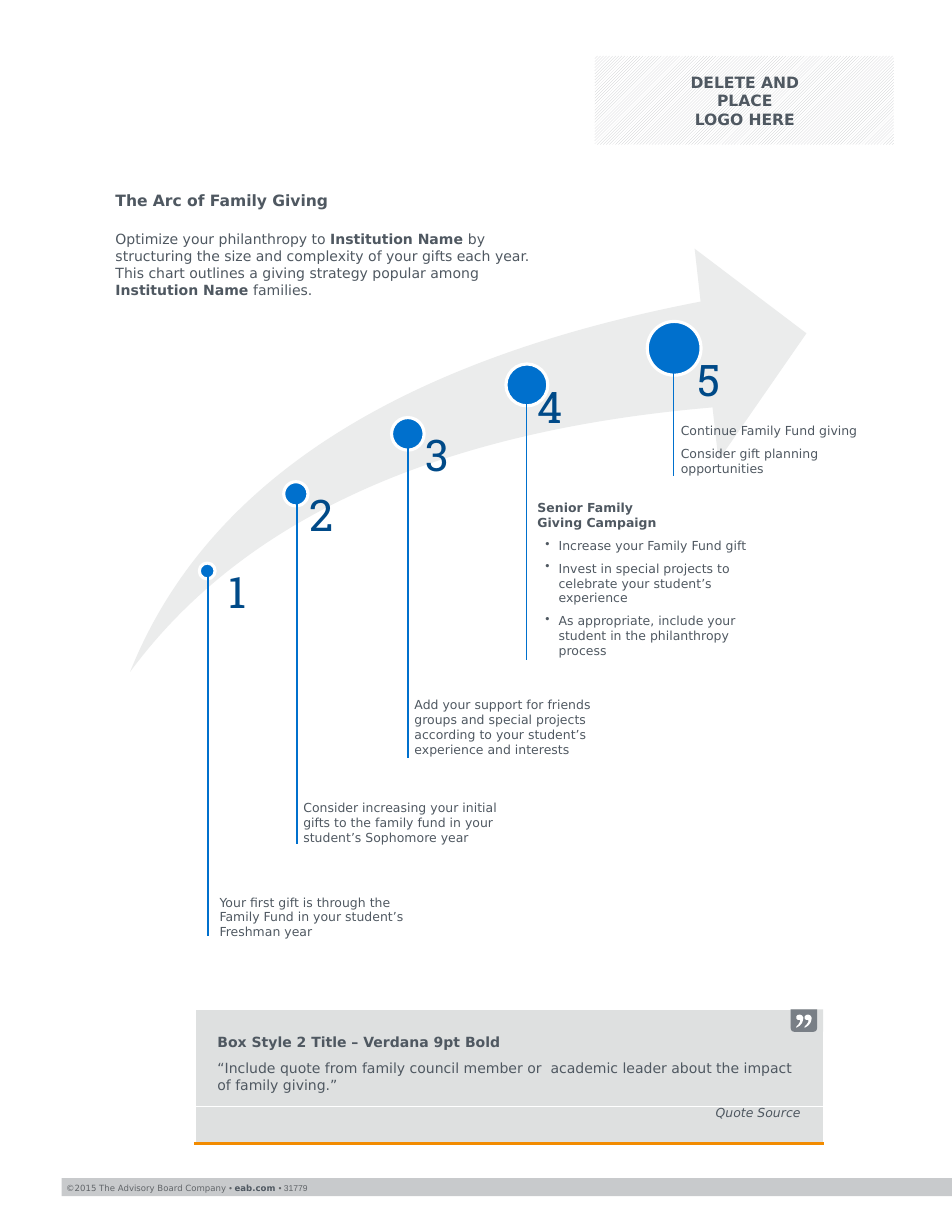
"""Build the Arc of Family Giving page."""
from dataclasses import dataclass
from typing import NamedTuple

from lxml.etree import SubElement
from pptx import Presentation
from pptx.dml.color import RGBColor
from pptx.enum.dml import MSO_PATTERN
from pptx.enum.shapes import MSO_CONNECTOR, MSO_SHAPE
from pptx.enum.text import MSO_ANCHOR, PP_ALIGN
from pptx.oxml.ns import qn
from pptx.util import Cm, Pt

WHITE = RGBColor(0xFF, 0xFF, 0xFF)
INK = RGBColor(0x4F, 0x58, 0x61)
FOOTER_INK = RGBColor(0x61, 0x65, 0x69)
FOOTER_GRAY = RGBColor(0xC8, 0xCA, 0xCC)
ARROW_GRAY = RGBColor(0xEB, 0xEC, 0xEC)
PANEL_GRAY = RGBColor(0xDE, 0xE0, 0xE0)
TAB_GRAY = RGBColor(0x79, 0x7F, 0x86)
BLUE = RGBColor(0x00, 0x70, 0xCD)
NAVY = RGBColor(0x00, 0x4A, 0x88)
ORANGE = RGBColor(0xF2, 0x8B, 0x00)
BODY_FONT = "DejaVu Sans"
NUMBER_FONT = "Roboto Slab"
NUMBER_BOTTOM = 15.22
QUOTE_MARK = [(0, 30), (0, 27), (5, 22), (8, 17), (9, 14), (7, 12), (3, 12), (0, 9), (0, 4),
              (3, 1), (8, 0), (13, 2), (16, 7), (15, 13), (13, 19), (8, 25)]


class Box(NamedTuple):
    left: float
    top: float
    width: float
    height: float

    def lengths(self) -> list:
        return [Cm(value) for value in self]


@dataclass
class Run:
    text: str
    bold: bool = False
    italic: bool = False
    font: str = BODY_FONT
    color: RGBColor = INK
    size: float | None = None


@dataclass
class Line:
    runs: list[Run]
    bullet: bool = False
    align: PP_ALIGN | None = None
    before: float = 5
    after: float = 0
    spacing: float | None = None


@dataclass
class Step:
    center: tuple[float, float]
    diameter: float
    number_box: Box
    inset: float
    align: PP_ALIGN
    stem: tuple[float, float, float]
    note_box: Box
    notes: list[Line]


def plain(*texts: str, bullet: bool = False) -> list[Line]:
    return [Line([Run(text)], bullet) for text in texts]


def number_box(left: float, top: float, width: float) -> Box:
    return Box(left, top, width, round(NUMBER_BOTTOM - top, 2))


STEPS = [
    Step((4.7, 12.95), 0.36, number_box(3.43, 12.95, 2.16), 0.18, PP_ALIGN.RIGHT,
         (4.72, 12.98, 21.23), Box(4.98, 20.29, 4.57, 1.02),
         plain("Your first gift is through the Family Fund in your student’s Freshman year")),
    Step((6.71, 11.2), 0.55, number_box(6.73, 11.2, 2.54), 0.3, PP_ALIGN.LEFT,
         (6.73, 11.3, 19.15), Box(6.88, 18.14, 4.57, 1.02),
         plain("Consider increasing your initial gifts to the family fund in your "
               "student’s Sophomore year")),
    Step((9.25, 9.84), 0.74, number_box(9.27, 9.83, 2.97), 0.38, PP_ALIGN.LEFT,
         (9.25, 10.06, 17.2), Box(9.4, 15.82, 4.57, 1.37),
         plain("Add your support for friends groups and special projects according to "
               "your student’s experience and interests")),
    Step((11.95, 8.73), 0.95, number_box(10.31, 8.76, 2.46), 0.51, PP_ALIGN.RIGHT,
         (11.94, 9.07, 14.96), Box(12.19, 11.35, 5.21, 3.61),
         [Line([Run("Senior Family\nGiving Campaign", bold=True)])]
         + plain("Increase your Family Fund gift",
                 "Invest in special projects to celebrate your student’s experience",
                 "As appropriate, include your student in the philanthropy process",
                 bullet=True)),
    Step((15.29, 7.9), 1.22, number_box(15.19, 8.15, 2.39), 0.64, PP_ALIGN.LEFT,
         (15.27, 8.2, 10.8), Box(15.44, 9.6, 4.57, 1.19),
         plain("Continue Family Fund giving", "Consider gift planning opportunities")),
]


def write(frame, lines: list[Line], size: float) -> None:
    for index, line in enumerate(lines):
        paragraph = frame.add_paragraph() if index else frame.paragraphs[0]
        paragraph.alignment = line.align
        paragraph.space_before = Pt(line.before if index else 0)
        paragraph.space_after = Pt(line.after)
        paragraph.line_spacing = line.spacing
        if line.bullet:
            properties = paragraph._p.get_or_add_pPr()
            properties.set("marL", str(Cm(0.48)))
            properties.set("indent", str(Cm(-0.3)))
            SubElement(properties, qn("a:buChar")).set("char", "•")
        for item in line.runs:
            for part, text in enumerate(item.text.split("\n")):
                if part:
                    paragraph.add_line_break()
                run = paragraph.add_run()
                run.text = text
                run.font.name = item.font
                run.font.size = Pt(item.size or size)
                run.font.bold = item.bold
                run.font.italic = item.italic
                run.font.color.rgb = item.color


def add_text(slide, box: Box, lines: list[Line], size: float, inset: float = 0,
             anchor: MSO_ANCHOR = MSO_ANCHOR.TOP) -> None:
    frame = slide.shapes.add_textbox(*box.lengths()).text_frame
    frame.word_wrap = True
    frame.vertical_anchor = anchor
    frame.margin_left = Cm(inset)
    frame.margin_top = frame.margin_right = frame.margin_bottom = 0
    write(frame, lines, size)


def paint(shape, color: RGBColor):
    shape.shadow.inherit = False
    shape.fill.solid()
    shape.fill.fore_color.rgb = color
    shape.line.fill.background()
    return shape


def add_preset(slide, kind: MSO_SHAPE, box: Box, color: RGBColor):
    return paint(slide.shapes.add_shape(kind, *box.lengths()), color)


def add_marker(slide, number: int, step: Step) -> None:
    (x, y), diameter = step.center, step.diameter
    circle = add_preset(slide, MSO_SHAPE.OVAL,
                        Box(x - diameter / 2, y - diameter / 2, diameter, diameter), BLUE)
    circle.line.color.rgb = WHITE
    circle.line.width = Pt(2)
    label = Run(str(number), font=NUMBER_FONT, color=NAVY)
    add_text(slide, step.number_box, [Line([label], align=step.align, spacing=0.9)], 28, step.inset)


def add_stem(slide, x: float, top: float, bottom: float) -> None:
    stem = slide.shapes.add_connector(MSO_CONNECTOR.STRAIGHT, Cm(x), Cm(top), Cm(x), Cm(bottom))
    stem.line.color.rgb = BLUE
    stem.line.width = Pt(1)
    SubElement(stem._element.spPr, qn("a:effectLst"))


def add_quote_panel(slide) -> None:
    table = slide.shapes.add_table(2, 1, *Box(4.42, 22.89, 14.25, 3.05).lengths()).table
    table.first_row = table.horz_banding = False
    title = Line([Run("Box Style 2 Title – Verdana 9pt Bold", bold=True)])
    quote = Line([Run("“Include quote from family council member or  academic leader about "
                      "the impact of family giving.”")], before=6, after=6)
    source = Line([Run("Quote Source", italic=True)], align=PP_ALIGN.RIGHT)
    rows = [(2.2, 0.58, 0.25, [title, quote], 9), (0.85, 0, 0.51, [source], 8)]
    for index, (height, top, bottom, lines, size) in enumerate(rows):
        table.rows[index].height = Cm(height)
        cell = table.cell(index, 0)
        cell.margin_left = cell.margin_right = Cm(0.51)
        cell.margin_top, cell.margin_bottom = Cm(top), Cm(bottom)
        write(cell.text_frame, lines, size)
        if index == len(rows) - 1:
            border = SubElement(cell._tc.get_or_add_tcPr(), qn("a:lnB"), w=str(Pt(2.25)))
            fill = SubElement(border, qn("a:solidFill"))
            SubElement(fill, qn("a:srgbClr"), val=str(ORANGE))
        cell.fill.solid()
        cell.fill.fore_color.rgb = PANEL_GRAY
    add_preset(slide, MSO_SHAPE.RECTANGLE, Box(17.93, 22.89, 0.74, 0.51), PANEL_GRAY)
    tab = add_preset(slide, MSO_SHAPE.ROUND_2_SAME_RECTANGLE, Box(17.93, 22.89, 0.6, 0.51), TAB_GRAY)
    tab.rotation = 180
    for left in (18.06, 18.25):
        builder = slide.shapes.build_freeform(*QUOTE_MARK[0], scale=Cm(0.01))
        builder.add_line_segments(QUOTE_MARK[1:], close=True)
        paint(builder.convert_to_shape(Cm(left), Cm(23.01)), WHITE)


def main() -> None:
    presentation = Presentation()
    presentation.slide_width, presentation.slide_height = Cm(21.59), Cm(27.94)
    slide = presentation.slides.add_slide(presentation.slide_layouts[6])
    add_preset(slide, MSO_SHAPE.RECTANGLE, Box(1.4, 26.72, 20.19, 0.41), FOOTER_GRAY)
    add_text(slide, Box(1.5, 26.82, 6.86, 0.23), [Line([
        Run("©2015 The Advisory Board Company ", color=FOOTER_INK),
        Run("• ", font="Arial", color=FOOTER_INK), Run("eab.com ", bold=True),
        Run("• 31779", font="Arial", color=FOOTER_INK)])], 5.5)
    arrow = add_preset(slide, MSO_SHAPE.SWOOSH_ARROW, Box(2.95, 5.64, 15.34, 9.6), ARROW_GRAY)
    arrow.adjustments[0] = arrow.adjustments[1] = 0.25
    for number, step in enumerate(STEPS, 1):
        add_marker(slide, number, step)
    for step in STEPS:
        add_stem(slide, *step.stem)
        add_text(slide, step.note_box, step.notes, 8)
    logo = add_preset(slide, MSO_SHAPE.RECTANGLE, Box(13.49, 1.27, 6.78, 2.01), WHITE)
    logo.fill.patterned()
    logo.fill.pattern = MSO_PATTERN.LIGHT_UPWARD_DIAGONAL
    logo.fill.fore_color.rgb, logo.fill.back_color.rgb = FOOTER_GRAY, WHITE
    add_text(slide, Box(15.11, 1.85, 3.56, 0.86),
             [Line([Run("DELETE AND PLACE\nLOGO HERE", bold=True)], align=PP_ALIGN.CENTER)],
             10, anchor=MSO_ANCHOR.MIDDLE)
    add_text(slide, Box(2.62, 4.32, 11.25, 0.43), [Line([Run("The Arc of Family Giving", bold=True)])], 10)
    institution = Run("Institution Name ", bold=True)
    add_text(slide, Box(2.62, 5.23, 9.8, 1.55), [Line([
        Run("Optimize your philanthropy to "), institution,
        Run("by structuring the size and complexity of your gifts each year. This chart "
            "outlines a giving strategy popular among "), institution, Run("families.")])], 9)
    add_quote_panel(slide)
    presentation.save("out.pptx")


if __name__ == "__main__":
    main()
